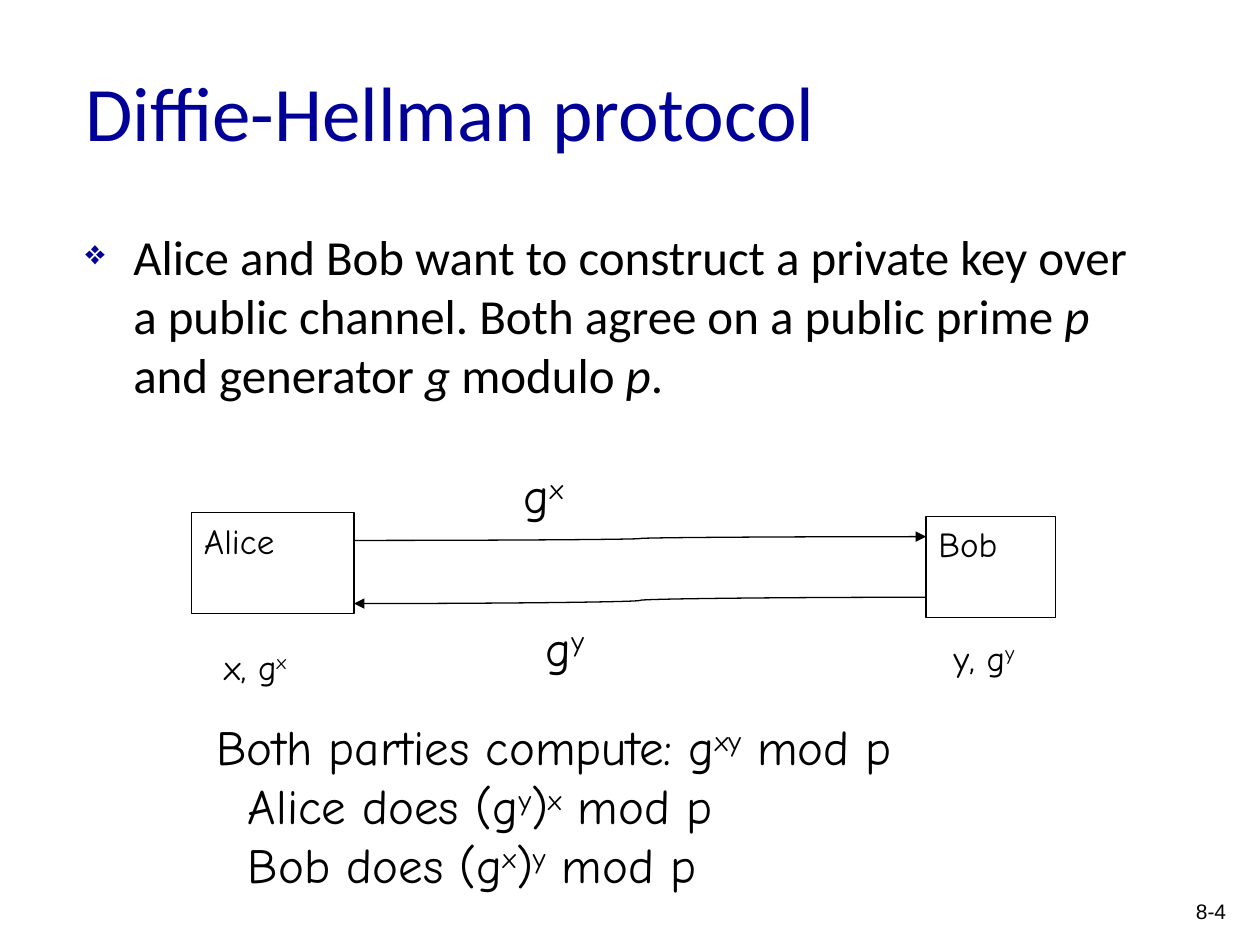
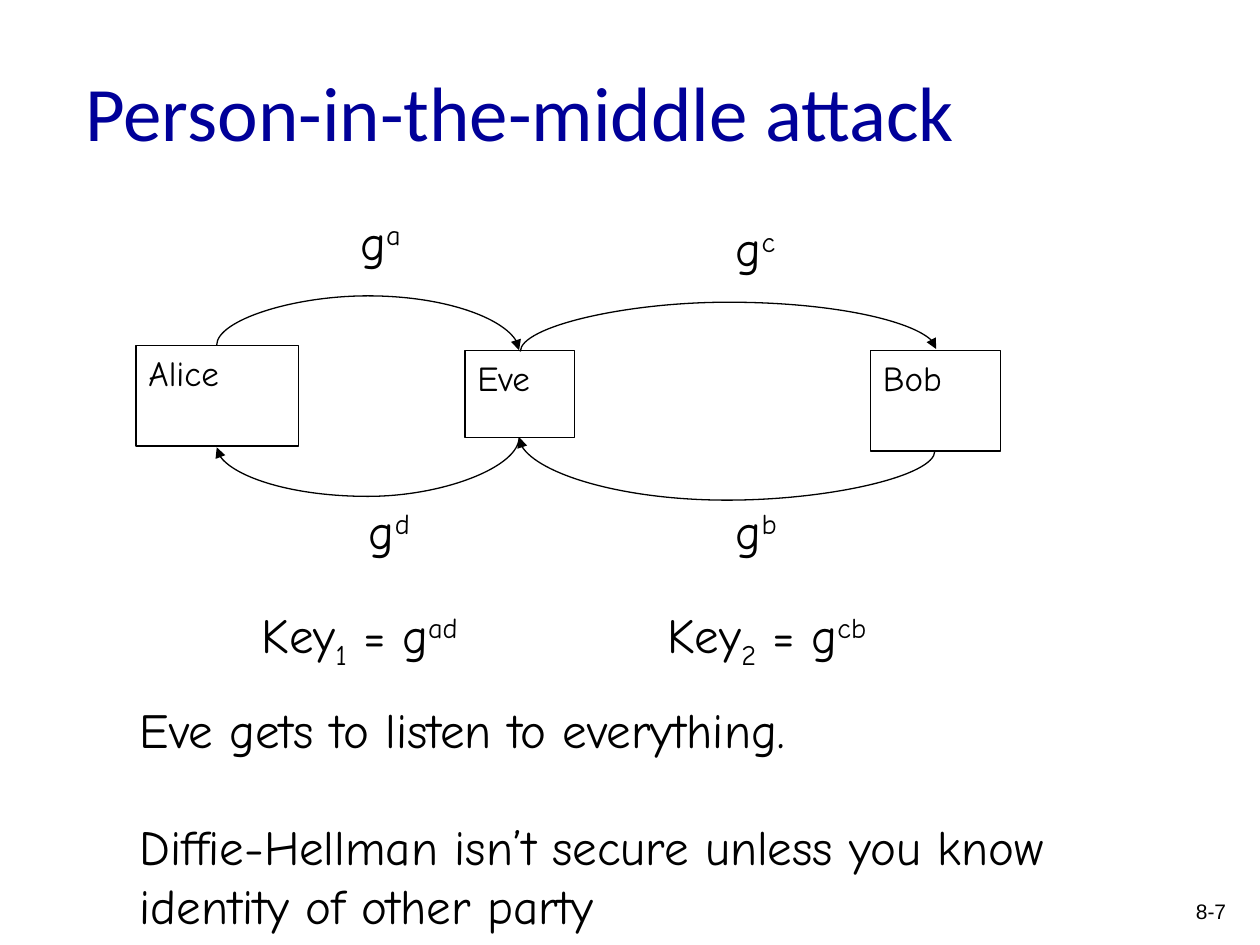
from dataclasses import dataclass

from lxml.etree import SubElement
from pptx import Presentation
from pptx.dml.color import RGBColor
from pptx.enum.shapes import MSO_CONNECTOR, MSO_SHAPE
from pptx.enum.text import MSO_ANCHOR, MSO_AUTO_SIZE, PP_ALIGN
from pptx.oxml.ns import qn
from pptx.util import Inches, Pt

NAVY = "000099"
BLACK = "000000"
HAND = "Comic Neue"
BODY = "Calibri"
LINE_WIDTH = 0.75
SUP, SUB = 30, -25


@dataclass
class Run:
    text: str
    base: int = 0
    italic: bool = False


@dataclass
class Para:
    runs: list[Run]
    indent: float = 0
    before: float = 0


@dataclass
class Party:
    name: str
    left: float
    top: float
    width: float
    height: float = 0.8


@dataclass
class Label:
    left: float
    top: float
    width: float
    height: float
    paras: list[Para]
    size: int = 28


@dataclass
class Arrow:
    x1: float
    y1: float
    x2: float
    y2: float
    bend_y: float | None = None


def rgb(value: str) -> RGBColor:
    return RGBColor.from_string(value)


def power(before: str, exponent: str) -> list[Run]:
    return [Run(before), Run(exponent, SUP)]


def key(index: str, exponent: str) -> list[Para]:
    return [Para([Run("Key"), Run(index, SUB)] + power(" = g", exponent))]


def message(left: float, top: float, exponent: str) -> Label:
    return Label(left, top, 0.56, 0.57, [Para(power("g", exponent))])


def write(p, runs: list[Run], size: int, font: str, color: str = BLACK) -> None:
    for run in runs:
        for i, line in enumerate(run.text.split("\n")):
            if i:
                p.add_line_break()
            r = p.add_run()
            r.text = line
            r.font.size = Pt(size)
            r.font.name = font
            r.font.color.rgb = rgb(color)
            if run.italic:
                r.font.italic = True
            if run.base:
                r._r.get_or_add_rPr().set("baseline", str(run.base * 1000))


def add_box(s, left: float, top: float, width: float, height: float):
    tf = s.shapes.add_textbox(Inches(left), Inches(top), Inches(width), Inches(height)).text_frame
    tf.word_wrap = True
    return tf


def add_label(s, label: Label) -> None:
    tf = add_box(s, label.left, label.top, label.width, label.height)
    tf.word_wrap = False
    tf.auto_size = MSO_AUTO_SIZE.SHAPE_TO_FIT_TEXT
    for i, para in enumerate(label.paras):
        p = tf.add_paragraph() if i else tf.paragraphs[0]
        p.space_before = Pt(para.before)
        if para.indent:
            p._p.get_or_add_pPr().set("marL", str(Inches(para.indent)))
        write(p, para.runs, label.size, HAND)


def add_party(s, party: Party) -> None:
    sp = s.shapes.add_shape(MSO_SHAPE.RECTANGLE, Inches(party.left), Inches(party.top),
                            Inches(party.width), Inches(party.height))
    sp.shadow.inherit = False
    sp.fill.background()
    sp.line.color.rgb = rgb(BLACK)
    sp.line.width = Pt(LINE_WIDTH)
    tf = sp.text_frame
    tf.word_wrap = False
    tf.vertical_anchor = MSO_ANCHOR.TOP
    p = tf.paragraphs[0]
    p.alignment = PP_ALIGN.LEFT
    write(p, [Run(party.name)], 20, HAND)


def bend(cxn, arrow: Arrow) -> None:
    dx, dy = arrow.x2 - arrow.x1, arrow.y2 - arrow.y1
    width, height = abs(dy), abs(dx)
    cxn.left = Inches((arrow.x1 + arrow.x2 - width) / 2)
    cxn.top = Inches((arrow.y1 + arrow.y2 - height) / 2)
    cxn.width, cxn.height = Inches(width), Inches(height)
    xfrm = cxn._element.spPr.find(qn("a:xfrm"))
    xfrm.set("rot", str(90 * 60000))
    xfrm.set("flipH", str(int(dy < 0)))
    xfrm.set("flipV", str(int(dx > 0)))
    guides = cxn._element.spPr.find(qn("a:prstGeom")).get_or_add_avLst()
    ratio = (arrow.bend_y - arrow.y1) / dy
    SubElement(guides, qn("a:gd"), name="adj1", fmla=f"val {round(ratio * 100000)}")


def add_arrow(s, arrow: Arrow) -> None:
    cxn = s.shapes.add_connector(MSO_CONNECTOR.CURVE, Inches(arrow.x1), Inches(arrow.y1),
                                 Inches(arrow.x2), Inches(arrow.y2))
    if arrow.bend_y is not None:
        bend(cxn, arrow)
    cxn.line.color.rgb = rgb(BLACK)
    cxn.line.width = Pt(LINE_WIDTH)
    SubElement(cxn.line._get_or_add_ln(), qn("a:tailEnd"), type="triangle")
    SubElement(cxn._element.spPr, qn("a:effectLst"))


def add_bullet(s, runs: list[Run]) -> None:
    p = add_box(s, 0.58, 1.75, 8.5, 1.64).paragraphs[0]
    p.space_before = Pt(5.6)
    pPr = p._p.get_or_add_pPr()
    pPr.set("marL", str(Inches(0.38)))
    pPr.set("indent", str(-Inches(0.38)))
    SubElement(SubElement(pPr, qn("a:buClr")), qn("a:srgbClr"), val=NAVY)
    SubElement(pPr, qn("a:buSzPct"), val="70000")
    SubElement(pPr, qn("a:buChar"), char="❖")
    write(p, runs, 28, BODY)


def add_slide(prs, title: str, number: str, parties: list[Party],
              arrows: list[Arrow], labels: list[Label]):
    s = prs.slides.add_slide(prs.slide_layouts[6])
    p = add_box(s, 9.09, 7.08, 0.74, 0.33).paragraphs[0]
    p.alignment = PP_ALIGN.RIGHT
    write(p, [Run(number)], 12, "Arial")
    tf = add_box(s, 0.58, 0.25, 8.5, 1.25)
    tf.vertical_anchor = MSO_ANCHOR.MIDDLE
    write(tf.paragraphs[0], [Run(title)], 44, BODY, NAVY)
    for party in parties:
        add_party(s, party)
    for arrow in arrows:
        add_arrow(s, arrow)
    for label in labels:
        add_label(s, label)
    return s


def add_protocol(prs) -> None:
    shared_key = [
        Para(power("Both parties compute: g", "xy") + [Run(" mod p")]),
        Para(power("Alice does (g", "y") + power(")", "x") + [Run(" mod p")], indent=0.25),
        Para(power("Bob does (g", "x") + power(")", "y") + [Run(" mod p")], indent=0.25),
    ]
    s = add_slide(
        prs, "Diffie-Hellman protocol", "8-4",
        [Party("Alice", 1.52, 4.07, 1.29), Party("Bob", 7.35, 4.1, 1.03)],
        [Arrow(2.81, 4.29, 7.35, 4.26), Arrow(7.35, 4.74, 2.81, 4.79)],
        [message(4.06, 3.64, "x"), message(4.23, 4.85, "y"),
         Label(1.62, 5.64, 6.06, 1.52, shared_key),
         Label(1.68, 5.07, 0.79, 0.44, [Para(power("x, g", "x"))], 20),
         Label(7.47, 5, 0.76, 0.44, [Para(power("y, g", "y"))], 20)])
    add_bullet(s, [
        Run("Alice and Bob want to construct a private key over a public channel. "
            "Both agree on a public prime "),
        Run("p", italic=True), Run(" and generator "), Run("g", italic=True),
        Run(" modulo "), Run("p", italic=True), Run(".")])


def add_attack(prs) -> None:
    lesson = [
        Para([Run("Eve gets to listen to everything.")]),
        Para([Run("Diffie-Hellman isn’t secure unless you know \nidentity of other party")],
             before=33.6),
    ]
    add_slide(
        prs, "Person-in-the-middle attack", "8-7",
        [Party("Alice", 1.08, 2.74, 1.29), Party("Bob", 6.91, 2.78, 1.03),
         Party("Eve", 3.69, 2.78, 0.87, 0.69)],
        [Arrow(1.72, 2.74, 4.12, 2.78, 2.35), Arrow(4.13, 2.79, 7.43, 2.77, 2.4),
         Arrow(7.42, 3.58, 4.12, 3.47, 3.97), Arrow(4.12, 3.47, 1.72, 3.55, 3.94)],
        [message(2.76, 1.63, "a"), message(5.74, 1.68, "c"),
         message(2.83, 3.92, "d"), message(5.74, 3.92, "b"),
         Label(1.98, 4.75, 1.91, 0.57, key("1", "ad")),
         Label(5.2, 4.75, 1.96, 0.57, key("2", "cb")),
         Label(1.01, 5.5, 8.23, 1.99, lesson)])


def main() -> None:
    prs = Presentation()
    prs.slide_width, prs.slide_height = Inches(10), Inches(7.5)
    add_protocol(prs)
    add_attack(prs)
    prs.save("out.pptx")


if __name__ == "__main__":
    main()
